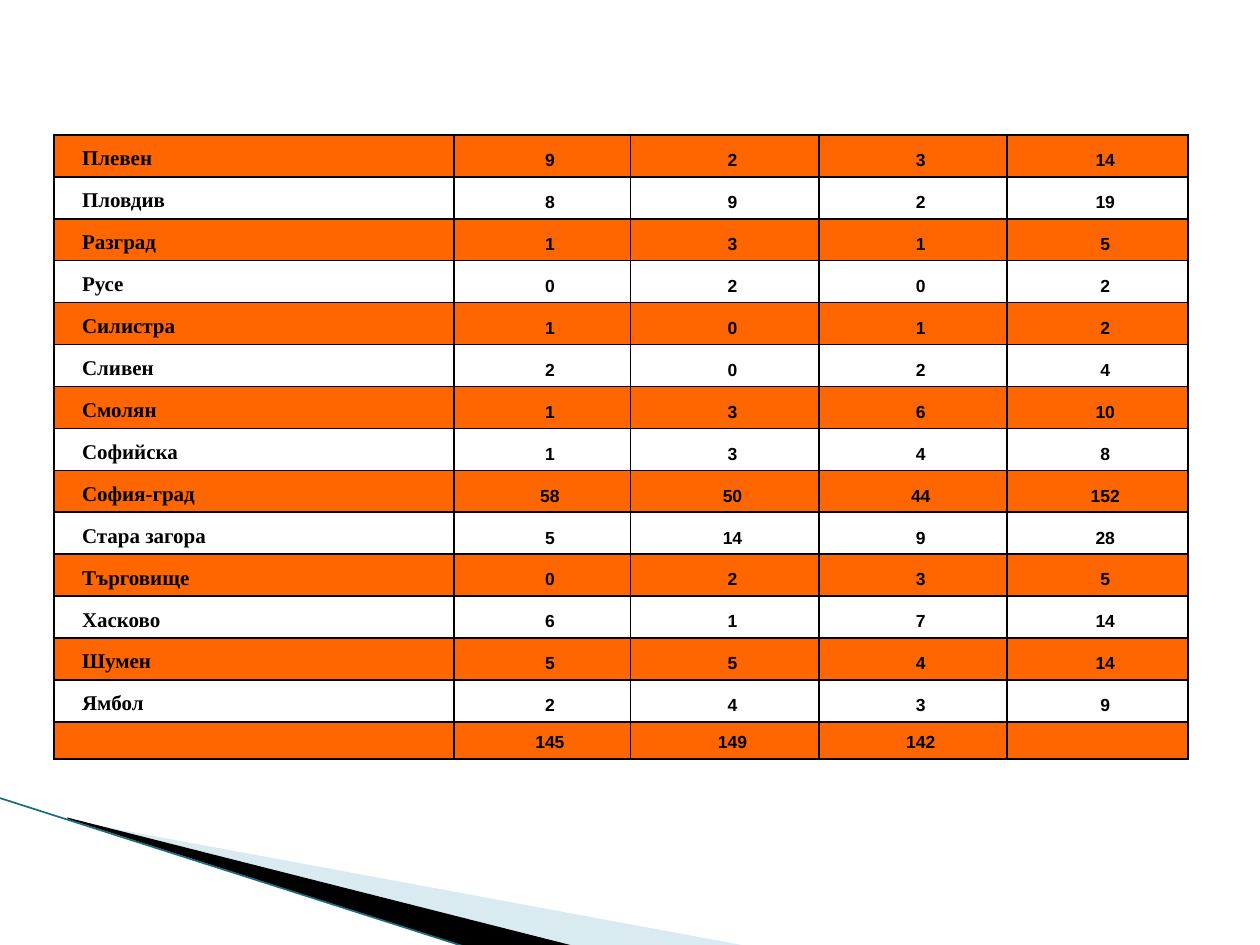
from lxml.etree import SubElement
from pptx import Presentation
from pptx.dml.color import RGBColor
from pptx.enum.shapes import MSO_CONNECTOR as Connector
from pptx.enum.text import MSO_ANCHOR as Anchor, PP_ALIGN as Align
from pptx.oxml import parse_xml
from pptx.oxml.ns import nsdecls, qn
from pptx.util import Cm, Pt

ORANGE = RGBColor(0xFF, 0x66, 0x00)
WHITE = RGBColor(0xFF, 0xFF, 0xFF)
BLACK = RGBColor(0x00, 0x00, 0x00)
PALE_BLUE = RGBColor(0xA0, 0xCB, 0xDC)
TEAL = RGBColor(0x1B, 0x6B, 0x80)

REGIONS = [
    ("Плевен", 9, 2, 3),
    ("Пловдив", 8, 9, 2),
    ("Разград", 1, 3, 1),
    ("Русе", 0, 2, 0),
    ("Силистра", 1, 0, 1),
    ("Сливен", 2, 0, 2),
    ("Смолян", 1, 3, 6),
    ("Софийска", 1, 3, 4),
    ("София-град", 58, 50, 44),
    ("Стара загора", 5, 14, 9),
    ("Търговище", 0, 2, 3),
    ("Хасково", 6, 1, 7),
    ("Шумен", 5, 5, 4),
    ("Ямбол", 2, 4, 3),
]
TOTALS = ("", 145, 149, 142, "")
COLUMN_WIDTHS = (8.06, 3.56, 3.8, 3.79, 3.65)
REGION_HEIGHT, TOTALS_HEIGHT = 0.845, 0.75


def write_text(cell, text, size=10, font="Arial", align=Align.CENTER):
    cell.vertical_anchor = Anchor.BOTTOM
    paragraph = cell.text_frame.paragraphs[0]
    if not text:
        SubElement(paragraph._p, qn("a:endParaRPr"), sz=str(size * 100))
        return
    paragraph.alignment = align
    indent = paragraph._p.get_or_add_pPr()
    indent.set("marL", str(Cm(1.02)))
    indent.set("indent", str(Cm(-0.71)))
    run = paragraph.add_run()
    run.text = text
    run.font.size = Pt(size)
    run.font.name = font
    run.font.bold = True
    run.font.color.rgb = BLACK


def style_cell(cell, color):
    properties = cell._tc.get_or_add_tcPr()
    for side in ("lnL", "lnR", "lnT", "lnB"):
        properties.append(parse_xml(
            f'<a:{side} {nsdecls("a")} w="{Pt(1)}"><a:solidFill>'
            f'<a:srgbClr val="{BLACK}"/></a:solidFill></a:{side}>'))
    cell.fill.solid()
    cell.fill.fore_color.rgb = color


def add_region_table(slide):
    rows = [(*region, sum(region[1:])) for region in REGIONS] + [TOTALS]
    heights = [REGION_HEIGHT] * len(REGIONS) + [TOTALS_HEIGHT]
    table = slide.shapes.add_table(
        len(rows), len(COLUMN_WIDTHS), Cm(1.09), Cm(2.72),
        Cm(sum(COLUMN_WIDTHS)), Cm(sum(heights))).table
    table.first_row = False
    table.horz_banding = False
    for column, width in zip(table.columns, COLUMN_WIDTHS):
        column.width = Cm(width)
    for index, (values, height) in enumerate(zip(rows, heights)):
        table.rows[index].height = Cm(height)
        for position, value in enumerate(values):
            cell = table.cell(index, position)
            style_cell(cell, WHITE if index % 2 else ORANGE)
            if position == 0 and value:
                write_text(cell, value, size=12, font="Times New Roman",
                           align=Align.LEFT)
            else:
                write_text(cell, str(value))


def add_wedge(slide, points, color, opacity=100):
    corners = [(Cm(x), Cm(y)) for x, y in points]
    builder = slide.shapes.build_freeform(*corners[0])
    builder.add_line_segments(corners[1:], close=True)
    wedge = builder.convert_to_shape()
    wedge.shadow.inherit = False
    wedge.line.fill.background()
    wedge.fill.solid()
    wedge.fill.fore_color.rgb = color
    if opacity < 100:
        tint = wedge._element.spPr.find(".//" + qn("a:srgbClr"))
        SubElement(tint, qn("a:alpha"), val=str(opacity * 1000))


def add_edge(slide, start, end, color, width):
    edge = slide.shapes.add_connector(
        Connector.STRAIGHT, *(Cm(length) for length in (*start, *end)))
    edge.line.color.rgb = color
    edge.line.width = Pt(width)
    SubElement(edge._element.spPr, qn("a:effectLst"))


def main():
    deck = Presentation()
    deck.slide_width, deck.slide_height = Cm(25.4), Cm(19.05)
    slide = deck.slides.add_slide(deck.slide_layouts[6])
    add_wedge(slide, [(1.4, 16.54), (15.11, 19.08), (11.58, 19.08),
                      (1.4, 16.51)], PALE_BLUE, opacity=40)
    add_wedge(slide, [(1.35, 16.48), (11.61, 19.08), (9.45, 19.1),
                      (1.37, 16.51)], BLACK)
    add_edge(slide, (-0.03, 16.08), (9.42, 19.1), TEAL, 0.95)
    add_region_table(slide)
    deck.save("out.pptx")


if __name__ == "__main__":
    main()
